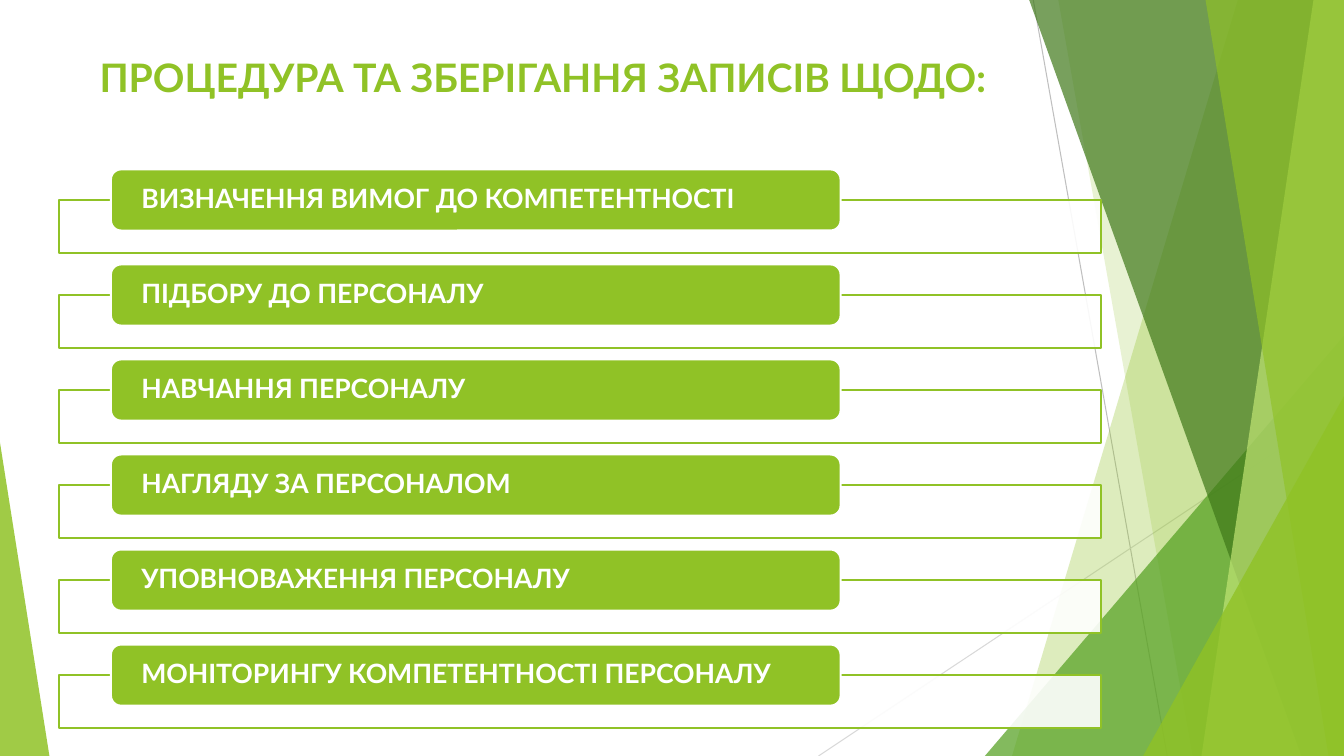
from dataclasses import dataclass

from lxml.etree import SubElement
from pptx import Presentation
from pptx.dml.color import RGBColor
from pptx.enum.shapes import MSO_CONNECTOR, MSO_SHAPE
from pptx.enum.text import MSO_ANCHOR, PP_ALIGN
from pptx.oxml.ns import qn
from pptx.util import Inches, Pt

FONT = "Lato"
GREEN, WHITE = "90C226", "FFFFFF"

prs = Presentation()
prs.slide_width, prs.slide_height = Inches(13.333), Inches(7.5)
s = prs.slides.add_slide(prs.slide_layouts[6])


@dataclass
class Ray:
    """A thin line; coordinates are percent of the slide."""
    x1: float
    y1: float
    x2: float
    y2: float
    color: str


@dataclass
class Facet:
    """A full-height panel with a slanted left edge, ending at the right side."""
    top_x: float
    bottom_x: float
    color: str
    alpha: int


@dataclass
class Corner:
    """A right triangle standing on the bottom edge; apex 0 is left, 1 is right."""
    x: float
    y: float
    w: float
    apex: int
    color: str
    alpha: int


RAYS = [Ray(76.88, 0, 86.85, 100, "BFBFBF"), Ray(100, 53.73, 60.9, 100, "D9D9D9")]
PANELS = [
    Facet(92.1, 75.3, GREEN, 30),
    Facet(78.75, 88.73, GREEN, 20),
    Corner(73.28, 44.4, 26.72, 1, "54A021", 72),
    Facet(76.58, 96.83, "3F7819", 70),
    Facet(97.73, 89.4, "C0E474", 70),
    Facet(89.7, 98.85, GREEN, 65),
    Corner(85.05, 52.4, 14.95, 1, GREEN, 80),
    Corner(0, 58.53, 3.68, 0, GREEN, 85),
]
TOPICS = [
    "ВИЗНАЧЕННЯ ВИМОГ ДО КОМПЕТЕНТНОСТІ",
    "ПІДБОРУ ДО ПЕРСОНАЛУ",
    "НАВЧАННЯ ПЕРСОНАЛУ",
    "НАГЛЯДУ ЗА ПЕРСОНАЛОМ",
    "УПОВНОВАЖЕННЯ ПЕРСОНАЛУ",
    "МОНІТОРИНГУ КОМПЕТЕНТНОСТІ ПЕРСОНАЛУ",
]
FIRST_ROW, ROW_PITCH = 22.4, 12.57


def px(share: float) -> int:
    return round(prs.slide_width * share / 100)


def py(share: float) -> int:
    return round(prs.slide_height * share / 100)


def box(x: float, y: float, w: float, h: float) -> tuple[int, int, int, int]:
    return px(x), py(y), px(w), py(h)


def rgb(color: str) -> RGBColor:
    return RGBColor.from_string(color)


def paint(sp, color: str, alpha: int = 100, line: str | None = None) -> None:
    sp.shadow.inherit = False
    sp.fill.solid()
    sp.fill.fore_color.rgb = rgb(color)
    if alpha < 100:
        clr = sp.fill._xPr.find(qn("a:solidFill"))[0]
        SubElement(clr, qn("a:alpha")).set("val", str(alpha * 1000))
    if line:
        sp.line.color.rgb = rgb(line)
        sp.line.width = Pt(1.5)
    else:
        sp.line.fill.background()


def write(sp, text: str, *, size: float, color: str, align=PP_ALIGN.LEFT,
          anchor=MSO_ANCHOR.TOP, spacing: float = 1.0) -> None:
    tf = sp.text_frame
    tf.word_wrap = True
    tf.vertical_anchor = anchor
    p = tf.paragraphs[0]
    p.alignment, p.line_spacing = align, spacing
    r = p.add_run()
    r.text = text
    r.font.name, r.font.size, r.font.bold = FONT, Pt(size), True
    r.font.color.rgb = rgb(color)


def draw_ray(ray: Ray) -> None:
    ln = s.shapes.add_connector(MSO_CONNECTOR.STRAIGHT, px(ray.x1), py(ray.y1),
                                px(ray.x2), py(ray.y2))
    ln.line.color.rgb = rgb(ray.color)
    ln.line.width = Pt(0.75)
    SubElement(ln._element.spPr, qn("a:effectLst"))


def draw_panel(panel: Facet | Corner) -> None:
    if isinstance(panel, Facet):
        fb = s.shapes.build_freeform(px(panel.top_x), 0)
        fb.add_line_segments([(px(100), 0), (px(100), py(100)),
                              (px(panel.bottom_x), py(100))], close=True)
        sp = fb.convert_to_shape()
    else:
        sp = s.shapes.add_shape(MSO_SHAPE.ISOSCELES_TRIANGLE,
                                *box(panel.x, panel.y, panel.w, 100 - panel.y))
        sp.adjustments[0] = panel.apex
    paint(sp, panel.color, panel.alpha)


def draw_topic(y: float, text: str) -> None:
    frame = s.shapes.add_shape(MSO_SHAPE.RECTANGLE, *box(4.4, y + 4.02, 77.55, 7))
    paint(frame, WHITE, 90, GREEN)
    tab = s.shapes.add_shape(MSO_SHAPE.ROUNDED_RECTANGLE, *box(8.25, y, 54.3, 8.1))
    paint(tab, GREEN, line=WHITE)
    tf = tab.text_frame
    tf.margin_left = tf.margin_right = px(2.05)
    tf.margin_top = tf.margin_bottom = 0
    write(tab, text, size=19, color=WHITE, anchor=MSO_ANCHOR.MIDDLE, spacing=0.9)


# Faceted background
for ray in RAYS:
    draw_ray(ray)
for panel in PANELS:
    draw_panel(panel)

# Title
title = s.shapes.add_textbox(*box(3.68, 6.4, 73.43, 10.27))
write(title, "ПРОЦЕДУРА ТА ЗБЕРІГАННЯ ЗАПИСІВ ЩОДО:", size=28, color=GREEN,
      align=PP_ALIGN.CENTER)

# List of topics
for i, topic in enumerate(TOPICS):
    draw_topic(FIRST_ROW + i * ROW_PITCH, topic)

prs.save("out.pptx")
